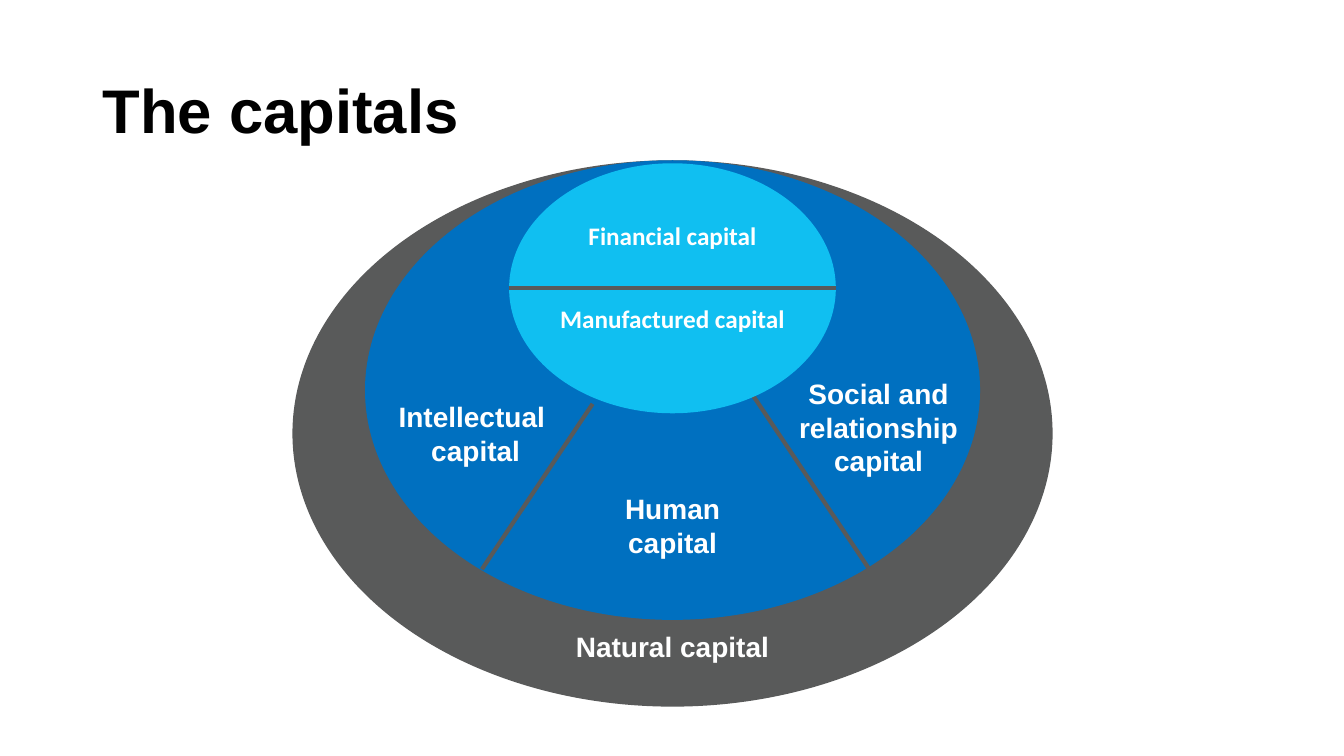
import dataclasses

import lxml.etree
import pptx
import pptx.dml.color
import pptx.enum.shapes
import pptx.enum.text
import pptx.oxml.ns
import pptx.util


@dataclasses.dataclass(frozen=True)
class Theme:
    ink: str = "000000"
    paper: str = "FFFFFF"
    natural: str = "595A5A"
    people: str = "0070C0"
    produced: str = "10BFF1"
    divider: str = "595A5A"
    divider_width: float = 3
    title_size: int = 44
    label_size: int = 20
    core_size: int = 18
    body_font: str = "Arial"
    core_font: str = "Calibri"


@dataclasses.dataclass(frozen=True)
class Box:
    left: float
    top: float
    width: float
    height: float

    def point(self, x, y):
        return round(self.left + x * self.width), round(self.top + y * self.height)

    def share(self, x, y, width, height):
        """Box given as shares of this one."""
        return Box(*self.point(x, y), round(width * self.width), round(height * self.height))

    def percent(self, *lengths):
        return self.share(*(length / 100 for length in lengths))

    def edges(self):
        return self.left, self.top, self.width, self.height


THEME = Theme()
LABEL = {"name": THEME.body_font, "size": pptx.util.Pt(THEME.label_size), "bold": True}
CORE_LABEL = {"name": THEME.core_font, "size": pptx.util.Pt(THEME.core_size), "bold": True}
TITLE = {"name": THEME.body_font, "size": pptx.util.Pt(THEME.title_size), "bold": True}


def rgb(code):
    return pptx.dml.color.RGBColor.from_string(code)


def add_text(slide, box, lines, font_format, colour, frame_format, paragraph_format):
    frame = slide.shapes.add_textbox(*box.edges()).text_frame
    paragraph = frame.paragraphs[0]
    for target, values in ((frame, {"word_wrap": True, **frame_format}),
                           (paragraph, paragraph_format)):
        for attribute, value in values.items():
            setattr(target, attribute, value)
    for number, line in enumerate(lines):
        if number:
            paragraph.add_line_break()
        run = paragraph.add_run()
        run.text = line
        for attribute, value in font_format.items():
            setattr(run.font, attribute, value)
        run.font.color.rgb = rgb(colour)


def add_divider(slide, start, end):
    divider = slide.shapes.add_connector(
        pptx.enum.shapes.MSO_CONNECTOR.STRAIGHT, *start, *end)
    divider.line.color.rgb = rgb(THEME.divider)
    divider.line.width = pptx.util.Pt(THEME.divider_width)
    lxml.etree.SubElement(divider.element.spPr, pptx.oxml.ns.qn("a:effectLst"))


def add_title(slide, box):
    add_text(slide, box, ["The capitals"], TITLE, THEME.ink,
             {"vertical_anchor": pptx.enum.text.MSO_ANCHOR.MIDDLE},
             {"line_spacing": 0.9})


def add_ring(slide, box, colour, label_format, labels, dividers=()):
    """Ellipse filling the box; labels and dividers are placed as shares of it."""
    ellipse = slide.shapes.add_shape(pptx.enum.shapes.MSO_SHAPE.OVAL, *box.edges())
    ellipse.shadow.inherit = False
    ellipse.fill.solid()
    ellipse.fill.fore_color.rgb = rgb(colour)
    ellipse.line.fill.background()
    for start, end in dividers:
        add_divider(slide, box.point(*start), box.point(*end))
    for lines, place in labels:
        add_text(slide, box.share(*place), lines, label_format, THEME.paper, {},
                 {"alignment": pptx.enum.text.PP_ALIGN.CENTER})


def add_capitals_slide(presentation):
    slide = presentation.slides.add_slide(presentation.slide_layouts[6])
    page = Box(0, 0, presentation.slide_width, presentation.slide_height)
    add_title(slide, page.percent(6.9, 5.33, 86.27, 19.33))
    add_ring(slide, page.percent(21.76, 21.2, 56.56, 72.27), THEME.natural, LABEL,
             [(["Natural capital"], (0.32, 0.85, 0.36, 0.08))])
    add_ring(slide, page.percent(27.16, 21.2, 45.76, 60.8), THEME.people, LABEL,
             [(["Social and relationship", "capital"], (0.68, 0.46, 0.31, 0.24)),
              (["Human", "capital"], (0.39, 0.71, 0.22, 0.17)),
              (["Intellectual ", "capital"], (0.03, 0.51, 0.3, 0.17))],
             [((0.37, 0.53), (0.19, 0.89)), ((0.63, 0.51), (0.83, 0.91))])
    add_ring(slide, page.percent(37.88, 21.6, 24.31, 33.07), THEME.produced, CORE_LABEL,
             [(["Financial capital"], (0.07, 0.21, 0.86, 0.21)),
              (["Manufactured capital"], (0.07, 0.54, 0.86, 0.37))],
             [((0, 0.5), (1, 0.5))])


def main():
    presentation = pptx.Presentation()
    presentation.slide_width = pptx.util.Inches(13.33)
    presentation.slide_height = pptx.util.Inches(7.5)
    add_capitals_slide(presentation)
    presentation.save("out.pptx")


if __name__ == "__main__":
    main()
